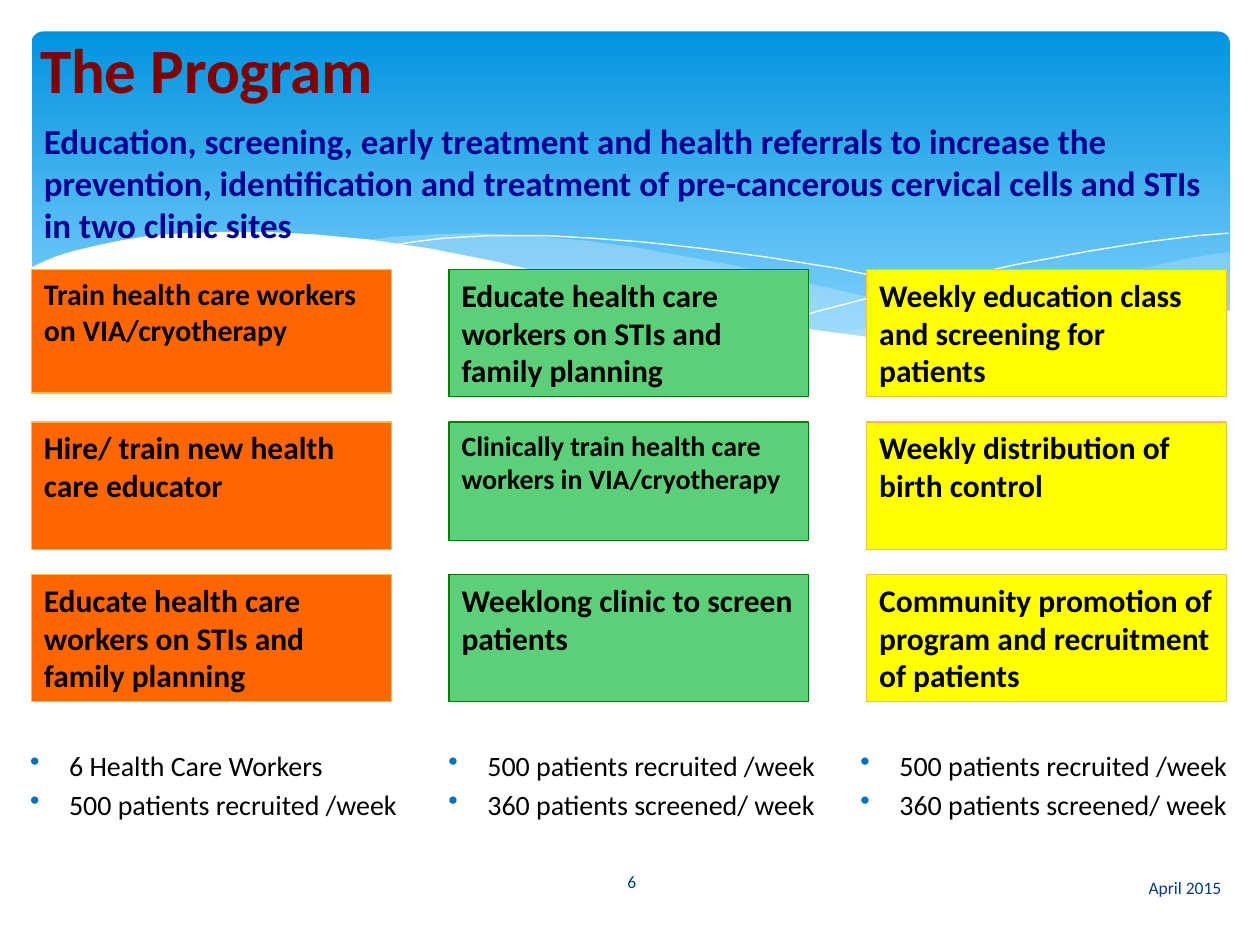
import pptx
import pptx.util
import pptx.dml.color
import pptx.enum.shapes
import pptx.enum.text
import pptx.oxml
import pptx.oxml.ns

RGB = pptx.dml.color.RGBColor
SHAPE = pptx.enum.shapes.MSO_SHAPE
ALIGN = pptx.enum.text.PP_ALIGN
ANCHOR = pptx.enum.text.MSO_ANCHOR
Pt = pptx.util.Pt
qn = pptx.oxml.ns.qn
NS = pptx.oxml.ns.nsdecls("a")

# Colours
SKY_TOP = RGB(0x02, 0x93, 0xE0)
SKY_BOTTOM = RGB(0x83, 0xD3, 0xFE)
MIST = RGB(0xC6, 0xE7, 0xFC)
WHITE = RGB(0xFF, 0xFF, 0xFF)
BLACK = RGB(0, 0, 0)
MAROON = RGB(0x80, 0, 0)
NAVY = RGB(0, 0, 0x90)
FOOTER_BLUE = RGB(0x07, 0x3E, 0x87)
BULLET_BLUE = RGB(0, 0x70, 0xC0)
ORANGE = RGB(0xFF, 0x66, 0)
GREEN = RGB(0x5B, 0xD0, 0x78)
DARK_GREEN = RGB(0, 0x80, 0)
YELLOW = RGB(0xFF, 0xFF, 0)
GOLD = RGB(0xF5, 0xC0, 0x40)

# The slide is a grid of 40 columns by 30 rows; wave points use 1/25 of a cell
CELL = pptx.util.Inches(0.25)
FINE = CELL // 25

# Wave outlines, in fine grid units
RIGHT_WAVE = [
    (976, 200), (948, 204), (906, 213), (861, 223), (805, 237), (753, 248),
    (706, 257), (661, 265), (691, 269), (732, 274), (769, 277), (803, 278),
    (835, 277), (863, 275), (889, 272), (913, 267), (935, 262), (963, 252),
    (976, 247)]
MIDDLE_WAVE = [
    (893, 273), (866, 269), (807, 260), (741, 247), (668, 231), (629, 222),
    (584, 211), (541, 203), (502, 196), (465, 191), (420, 187), (380, 185),
    (344, 186), (313, 188), (286, 191), (323, 196), (362, 203), (404, 211),
    (449, 222), (530, 240), (601, 255), (665, 266), (722, 274), (773, 277),
    (818, 278), (857, 277), (893, 273)]
LONG_CREST = [
    (309, 195), (328, 192), (353, 189), (387, 187), (433, 187), (469, 189),
    (510, 192), (556, 197), (608, 204), (665, 213), (727, 226), (795, 241),
    (869, 261), (907, 272)]
SHORT_CREST = [
    (613, 257), (653, 246), (695, 235), (748, 223), (806, 210), (866, 199),
    (910, 192), (951, 187), (975, 185)]
WHITE_WAVE = [
    (977, 246), (950, 256), (920, 265), (887, 271), (850, 275), (809, 277),
    (761, 275), (708, 270), (648, 262), (579, 250), (503, 233), (447, 220),
    (391, 207), (340, 197), (292, 190), (250, 186), (211, 184), (177, 184),
    (146, 185), (119, 187), (95, 191), (76, 195), (59, 199), (46, 203),
    (36, 207), (23, 213), (23, 329), (977, 329)]


class Deck:
    """Holds the slide and its style."""

    font = "Calibri"

    def __init__(self, columns, rows):
        self.prs = pptx.Presentation()
        self.prs.slide_width = columns * CELL
        self.prs.slide_height = rows * CELL
        self.s = self.prs.slides.add_slide(self.prs.slide_layouts[6])

    def grid(self, *cells):
        return [round(c * CELL) for c in cells]

    def set_lines(self, tf, lines, color, fmt, para=None):
        tf.word_wrap = True
        for i, line in enumerate(lines):
            p = tf.paragraphs[0] if i == 0 else tf.add_paragraph()
            for name, value in {"alignment": ALIGN.LEFT, **(para or {})}.items():
                setattr(p, name, value)
            r = p.add_run()
            r.text = line
            for name, value in {"name": self.font, **fmt}.items():
                setattr(r.font, name, value)
            r.font.color.rgb = color

    def text(self, at, lines, color, fmt, para=None, anchor=ANCHOR.TOP):
        tf = self.s.shapes.add_textbox(*self.grid(*at)).text_frame
        tf.vertical_anchor = anchor
        self.set_lines(tf, lines, color, fmt, para)
        return tf

    def bullets(self, at, lines):
        tf = self.text(at, lines, BLACK, {"size": Pt(16)}, {"space_before": Pt(3.2)})
        indent = round(1.24 * CELL)
        for p in tf.paragraphs:
            pPr = p._p.get_or_add_pPr()
            pPr.set("marL", str(indent))
            pPr.set("indent", str(-indent))
            pPr.append(pptx.oxml.parse_xml(
                f'<a:buClr {NS}><a:srgbClr val="{BULLET_BLUE}"/></a:buClr>'))
            pPr.append(pptx.oxml.parse_xml(f'<a:buChar {NS} char="•"/>'))

    def sky(self, at):
        sp = self.s.shapes.add_shape(SHAPE.ROUNDED_RECTANGLE, *self.grid(*at))
        sp.adjustments[0] = 0.034
        sp.shadow.inherit = False
        sp.line.fill.background()
        sp.fill.gradient()
        sp.fill.gradient_angle = 270
        stops = zip(sp.fill.gradient_stops, (0, 0.9), (SKY_TOP, SKY_BOTTOM))
        for stop, position, color in stops:
            stop.position = position
            stop.color.rgb = color

    def outline(self, points, close):
        fb = self.s.shapes.build_freeform(*points[0], scale=FINE)
        fb.add_line_segments(points[1:], close=close)
        sp = fb.convert_to_shape()
        sp.shadow.inherit = False
        return sp

    def wave(self, points, color, opacity=100):
        sp = self.outline(points, True)
        sp.line.fill.background()
        sp.fill.solid()
        sp.fill.fore_color.rgb = color
        if opacity < 100:
            clr = sp._element.spPr.find(qn("a:solidFill")).find(qn("a:srgbClr"))
            clr.append(pptx.oxml.parse_xml(f'<a:alpha {NS} val="{opacity * 1000}"/>'))

    def crest(self, points):
        sp = self.outline(points, False)
        sp.fill.background()
        sp.line.color.rgb = WHITE
        sp.line.width = Pt(0)

    def card(self, column, row, line, fill, border, size=18, height=4.04):
        at = self.grid(1 + 13.26 * column, 8.56 + 4.84 * row, 11.42, height)
        sp = self.s.shapes.add_shape(SHAPE.RECTANGLE, *at)
        sp.shadow.inherit = False
        sp.fill.solid()
        sp.fill.fore_color.rgb = fill
        sp.line.color.rgb = border
        sp.line.width = Pt(0.75)
        sp.text_frame.vertical_anchor = ANCHOR.TOP
        self.set_lines(sp.text_frame, [line], BLACK, {"size": Pt(size), "bold": True})


def main():
    deck = Deck(40, 30)

    # Sky banner and waves
    deck.sky((1, 1, 38.04, 10.8))
    deck.wave(RIGHT_WAVE, MIST, 29)
    deck.wave(MIDDLE_WAVE, MIST, 40)
    deck.crest(LONG_CREST)
    deck.crest(SHORT_CREST)
    deck.wave(WHITE_WAVE, WHITE)

    # Title and summary
    deck.text((0.88, 0.04, 38, 4.24), ["The Program"], MAROON,
              {"size": Pt(36), "bold": True}, anchor=ANCHOR.MIDDLE)
    deck.text((1, 3.6, 37.88, 4.32),
              ["Education, screening, early treatment and health referrals to "
               "increase the prevention, identification and treatment of "
               "pre-cancerous cervical cells and STIs in two clinic sites"],
              NAVY, {"size": Pt(20), "bold": True})

    # Cards by column: fill, border, then text with optional size and height
    educate = "Educate health care workers on STIs and family planning"
    columns = [
        (ORANGE, GOLD, [
            ("Train health care workers on VIA/cryotherapy", 17, 3.92),
            ("Hire/ train new health care educator",),
            (educate,)]),
        (GREEN, DARK_GREEN, [
            (educate,),
            ("Clinically train health care workers in VIA/cryotherapy", 16, 3.76),
            ("Weeklong clinic to screen patients",)]),
        (YELLOW, GOLD, [
            ("Weekly education class and screening for patients",),
            ("Weekly distribution of birth control",),
            ("Community promotion of program and recruitment of patients",)]),
    ]
    for column, (fill, border, cards) in enumerate(columns):
        for row, (line, *options) in enumerate(cards):
            deck.card(column, row, line, fill, border, *options)

    # Results under each column
    recruited = "500 patients recruited /week"
    screened = "360 patients screened/ week"
    results = [(0.56, ["6 Health Care Workers", recruited]),
               (13.84, [recruited, screened]),
               (26.92, [recruited, screened])]
    for left, lines in results:
        deck.bullets((left, 23.56, 13.24, 3.6), lines)

    # Footer
    small = {"size": Pt(10)}
    deck.text((17.52, 27.2, 5.08, 1.6), ["6"], FOOTER_BLUE, small,
              {"alignment": ALIGN.CENTER}, ANCHOR.MIDDLE)
    deck.text((22.6, 27.36, 16.56, 1.6), ["April 2015"], FOOTER_BLUE, small,
              {"alignment": ALIGN.RIGHT}, ANCHOR.MIDDLE)

    deck.prs.save("out.pptx")


if __name__ == "__main__":
    main()
